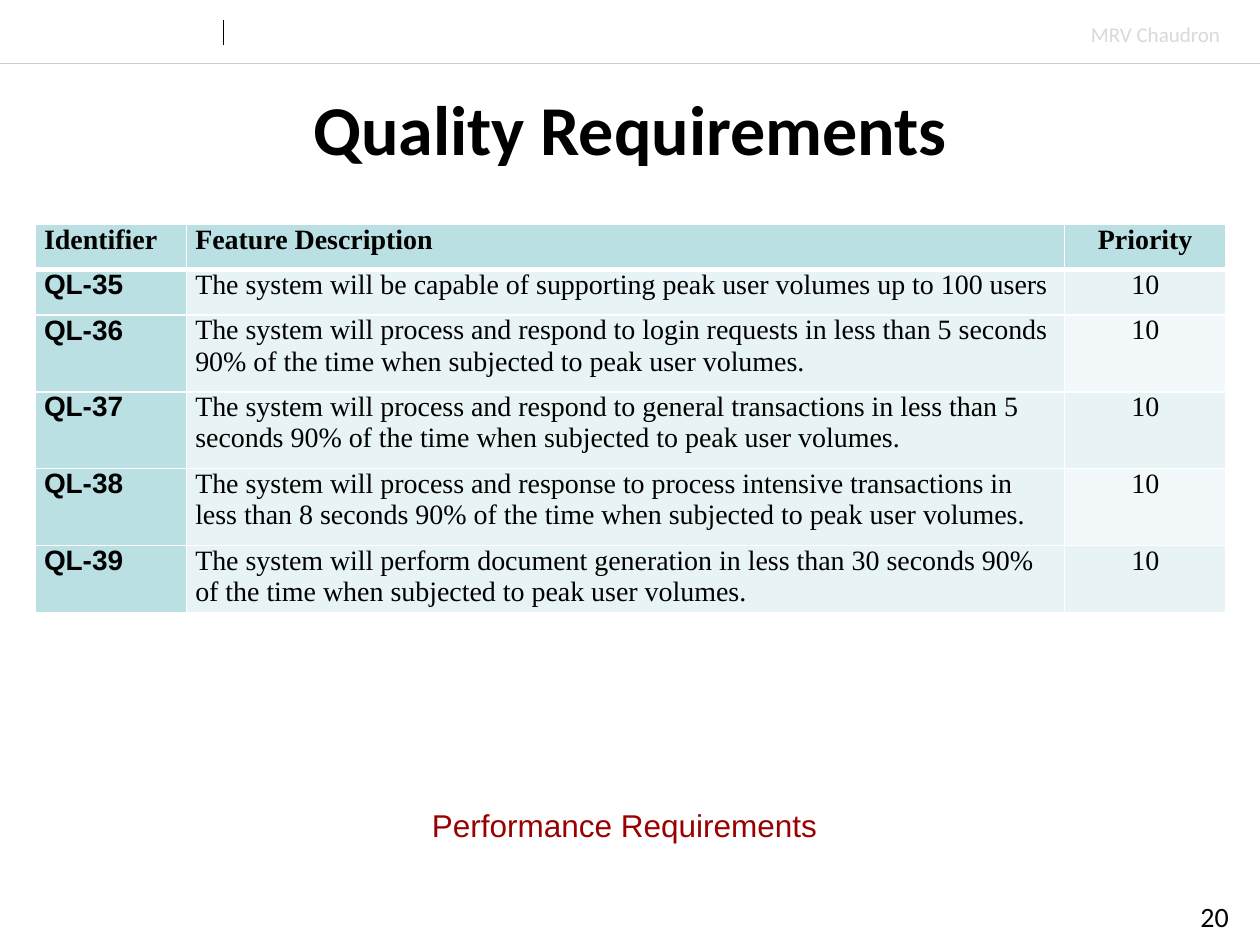
"""Build the quality requirements slide with its table of performance rows."""
from dataclasses import dataclass, field

from lxml import etree
from pptx import Presentation
from pptx import util as u
from pptx.dml import color
from pptx.enum import shapes, text
from pptx.oxml import ns

ALIGN = text.PP_ALIGN
ANCHOR = text.MSO_ANCHOR
SERIF = "Times New Roman"
HEADER_FILL, BODY_FILL, PALE_FILL = "BBE0E3", "E7F3F4", "F3F9FA"
TABLE_LEFT, TABLE_TOP = 0.28, 1.78
COLUMN_WIDTHS = (1.2, 6.97, 1.28)
ROW_HEIGHTS = (0.36, 0.36, 0.61, 0.61, 0.61, 0.49)
COLUMN_ALIGN = (ALIGN.LEFT, ALIGN.LEFT, ALIGN.CENTER)
HEADINGS = ("Identifier", "Feature Description", "Priority")
REQUIREMENTS = (
    ("QL-35", "The system will be capable of supporting peak user volumes up to 100 users", "10"),
    ("QL-36\u00a0".strip(), "The system will process and respond to login requests in less than 5 seconds "
     "90% of the time when subjected to peak user volumes.", "10"),
    ("QL-37", "The system will process and respond to general transactions in less than 5 "
     "seconds 90% of the time when subjected to peak user volumes.", "10"),
    ("QL-38", "The system will process and response to process intensive transactions in "
     "less than 8 seconds 90% of the time when subjected to peak user volumes.", "10"),
    ("QL-39", "The system will perform document generation in less than 30 seconds 90% "
     "of the time when subjected to peak user volumes.", "10"),
)


@dataclass
class Label:
    words: str
    place: tuple[float, float, float, float]
    font: dict
    align: ALIGN = ALIGN.LEFT
    frame: dict = field(default_factory=lambda: {"word_wrap": False})


@dataclass
class Rule:
    start: tuple[float, float]
    end: tuple[float, float]
    ink: str
    width: float


RULES = (
    Rule((0, 0.5), (10, 0.5), "CCCCCC", 0.25),
    Rule((1.77, 0.16), (1.77, 0.36), "000000", 0.5),
)
MIDDLE = {"word_wrap": True, "vertical_anchor": ANCHOR.MIDDLE}
LABELS = (
    Label("MRV Chaudron", (8.56, 0.12, 1.23, 0.3),
          {"name": "Calibri", "size": 12, "color": "D9D9D9"}),
    Label("Quality Requirements", (0, 0.6, 10, 0.83),
          {"name": "Calibri", "size": 40, "color": "000000", "bold": True}, ALIGN.CENTER, MIDDLE),
    Label("20", (9.41, 7.1, 0.44, 0.35),
          {"name": "Calibri", "size": 16, "color": "000000"}, ALIGN.RIGHT, MIDDLE),
    Label("Performance Requirements", (3.33, 6.35, 3.29, 0.4),
          {"name": "Arial", "size": 18, "color": "990000"}),
)


def rgb(value: str) -> color.RGBColor:
    return color.RGBColor.from_string(value)


def write(frame, words: str, font: dict, align: ALIGN) -> None:
    para = frame.paragraphs[0]
    para.alignment = align
    span = para.add_run()
    span.text = words
    for name, value in font.items():
        if name == "color":
            span.font.color.rgb = rgb(value)
        else:
            setattr(span.font, name, u.Pt(value) if name == "size" else value)


def draw_label(page, label: Label) -> None:
    box = page.shapes.add_textbox(*map(u.Inches, label.place))
    for name, value in label.frame.items():
        setattr(box.text_frame, name, value)
    write(box.text_frame, label.words, label.font, label.align)


def draw_rule(page, rule: Rule) -> None:
    line = page.shapes.add_connector(
        shapes.MSO_CONNECTOR.STRAIGHT, *map(u.Inches, rule.start + rule.end))
    line.line.color.rgb = rgb(rule.ink)
    line.line.width = u.Pt(rule.width)
    etree.SubElement(line._element.spPr, ns.qn("a:effectLst"))


def add_borders(cell, widths: dict[str, float]) -> None:
    properties = cell._tc.get_or_add_tcPr()
    for side, width in widths.items():
        edge = etree.SubElement(properties, ns.qn(f"a:ln{side}"), w=str(u.Pt(width)))
        fill = etree.SubElement(edge, ns.qn("a:solidFill"))
        etree.SubElement(fill, ns.qn("a:srgbClr"), val="FFFFFF")


def cell_fill(row: int, column: int) -> str:
    if row == 0 or column == 0:
        return HEADER_FILL
    return PALE_FILL if column == 2 and row % 2 == 0 else BODY_FILL


def draw_cell(cell, words: str, row: int, column: int) -> None:
    margins = {"margin_left": 0.07, "margin_right": 0.07, "margin_top": 0, "margin_bottom": 0}
    for name, value in margins.items():
        setattr(cell, name, u.Inches(value))
    add_borders(cell, {"L": 1, "R": 1, "T": 3 if row == 1 else 1, "B": 3 if row == 0 else 1})
    cell.fill.solid()
    cell.fill.fore_color.rgb = rgb(cell_fill(row, column))
    font = {"name": "Arial" if row and column == 0 else SERIF, "size": 16,
            "color": "000000", "bold": row == 0 or column == 0}
    write(cell.text_frame, words, font, COLUMN_ALIGN[column])


def draw_table(page) -> None:
    place = (TABLE_LEFT, TABLE_TOP, sum(COLUMN_WIDTHS), sum(ROW_HEIGHTS))
    table = page.shapes.add_table(
        len(ROW_HEIGHTS), len(COLUMN_WIDTHS), *map(u.Inches, place)).table
    for column, width in zip(table.columns, COLUMN_WIDTHS):
        column.width = u.Inches(width)
    for row, height in zip(table.rows, ROW_HEIGHTS):
        row.height = u.Inches(height)
    for row, entries in enumerate((HEADINGS, *REQUIREMENTS)):
        for column, words in enumerate(entries):
            draw_cell(table.cell(row, column), words, row, column)


def main() -> None:
    deck = Presentation()
    deck.slide_width, deck.slide_height = u.Inches(10), u.Inches(7.5)
    page = deck.slides.add_slide(deck.slide_layouts[6])
    for rule in RULES:
        draw_rule(page, rule)
    for label in LABELS:
        draw_label(page, label)
    draw_table(page)
    deck.save("out.pptx")


if __name__ == "__main__":
    main()
